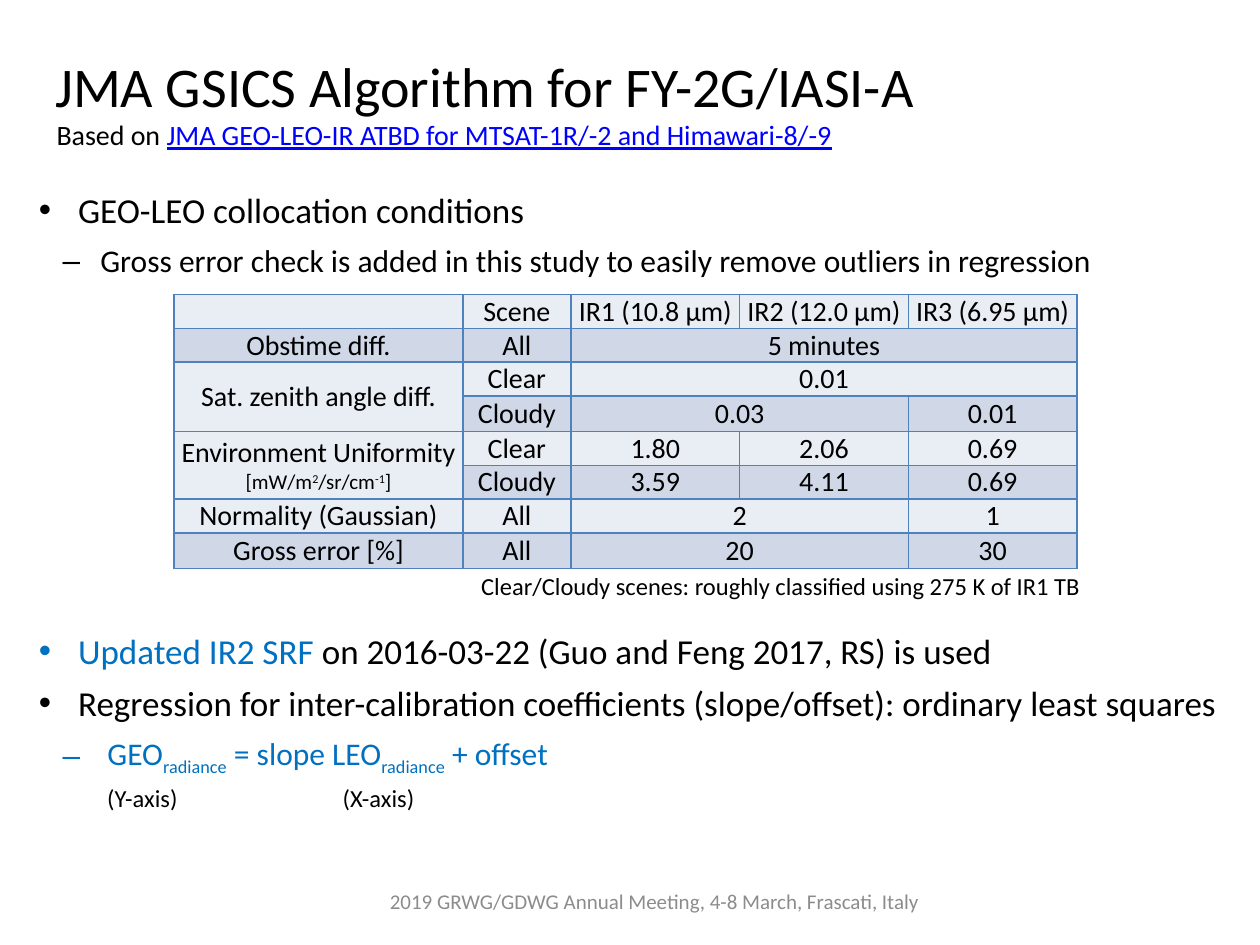
import lxml.etree
import pptx
import pptx.dml.color
import pptx.enum.text
import pptx.oxml.ns
import pptx.util

Cm = pptx.util.Cm
Pt = pptx.util.Pt
RGBColor = pptx.dml.color.RGBColor
ALIGN = pptx.enum.text.PP_ALIGN
ANCHOR = pptx.enum.text.MSO_ANCHOR
qn = pptx.oxml.ns.qn

BLACK = RGBColor(0x00, 0x00, 0x00)
BLUE = RGBColor(0x00, 0x70, 0xC0)
LINK_BLUE = RGBColor(0x00, 0x00, 0xFF)
FOOTER_GRAY = RGBColor(0x8C, 0x8C, 0x8C)
BORDER = RGBColor(0x4F, 0x81, 0xBD)
BANDS = [RGBColor(0xE9, 0xED, 0xF4), RGBColor(0xD0, 0xD8, 0xE8)]


def add_runs(paragraph, size, *parts):
    """Append (text, colour, baseline shift in percent) parts as runs."""
    for text, color, baseline in parts:
        run = paragraph.add_run()
        run.text = text
        run.font.name = "Calibri"
        run.font.size = Pt(size)
        run.font.color.rgb = color
        if baseline:
            run.font._element.set("baseline", str(baseline * 1000))


def add_label(left, top, width, height, size, *parts):
    text_box = slide.shapes.add_textbox(Cm(left), Cm(top), Cm(width), Cm(height))
    text_box.text_frame.word_wrap = True
    add_runs(text_box.text_frame.paragraphs[0], size, *parts)
    return text_box.text_frame


presentation = pptx.Presentation()
presentation.slide_width = Cm(25.4)
presentation.slide_height = Cm(19.05)
slide = presentation.slides.add_slide(presentation.slide_layouts[1])

# Title and source document
title = slide.shapes.title
title.left, title.top, title.width, title.height = Cm(0.86), Cm(0.91), Cm(18.1), Cm(1.63)
title.text_frame.auto_size = pptx.enum.text.MSO_AUTO_SIZE.NONE
title.text_frame.word_wrap = False
title.text_frame.vertical_anchor = ANCHOR.TOP
title.text_frame.paragraphs[0].alignment = ALIGN.LEFT
add_runs(title.text_frame.paragraphs[0], 32, ("JMA GSICS Algorithm for FY-2G/IASI-A", BLACK, 0))

subtitle = add_label(0.89, 2.24, 19, 0.94, 16, ("Based on ", BLACK, 0),
                     ("JMA GEO-LEO-IR ATBD for MTSAT-1R/-2 and Himawari-8/-9", LINK_BLUE, 0))
subtitle.paragraphs[0].runs[1].font.underline = True

# Bullet list: level, space before (the large one leaves room for the table), runs
bullets = [
    (0, 0, [("GEO-LEO collocation conditions", BLACK, 0)]),
    (1, 0, [("Gross error check is added in this study to easily remove outliers in regression",
             BLACK, 0)]),
    (0, 194, [("Updated IR2 SRF ", BLUE, 0),
              ("on 2016-03-22 (Guo and Feng 2017, RS) is used", BLACK, 0)]),
    (0, 0, [("Regression for inter-calibration coefficients (slope/offset): "
             "ordinary least squares", BLACK, 0)]),
    (1, 0, [(" GEO", BLUE, 0), ("radiance", BLUE, -25), (" = slope LEO", BLUE, 0),
            ("radiance", BLUE, -25), (" + offset", BLUE, 0)]),
]
body = slide.placeholders[1]
body.left, body.top, body.width, body.height = Cm(0.53), Cm(3.68), Cm(24.6), Cm(12.07)
body.text_frame.auto_size = pptx.enum.text.MSO_AUTO_SIZE.NONE
body.text_frame.vertical_anchor = ANCHOR.TOP
for index, (level, space_before, parts) in enumerate(bullets):
    paragraph = body.text_frame.paragraphs[0] if index == 0 else body.text_frame.add_paragraph()
    paragraph.level = level
    paragraph.space_before = Pt(space_before)
    paragraph.space_after = Pt(6)
    properties = paragraph._p.get_or_add_pPr()
    properties.set("marL", str(Cm([0.79, 1.24][level])))
    properties.set("indent", str(Cm([-0.79, -0.76][level])))
    add_runs(paragraph, [20, 18][level], *parts)

# Table of collocation conditions
conditions = [
    ["", "Scene", "IR1 (10.8 μm)", "IR2 (12.0 μm)", "IR3 (6.95 μm)"],
    ["Obstime diff.", "All", "5 minutes", "", ""],
    ["Sat. zenith angle diff.", "Clear", "0.01", "", ""],
    ["", "Cloudy", "0.03", "", "0.01"],
    ["Environment Uniformity", "Clear", "1.80", "2.06", "0.69"],
    ["", "Cloudy", "3.59", "4.11", "0.69"],
    ["Normality (Gaussian)", "All", "2", "", "1"],
    ["Gross error [%]", "All", "20", "", "30"],
]
merges = [(1, 2, 1, 4), (2, 2, 2, 4), (3, 2, 3, 3), (6, 2, 6, 3), (7, 2, 7, 3),
          (2, 0, 3, 0), (4, 0, 5, 0)]
column_widths = [5.82, 2.18, 3.4, 3.4, 3.4]
row_heights = [0.68, 0.68, 0.68, 0.72, 0.68, 0.68, 0.68, 0.72]

table = slide.shapes.add_table(len(row_heights), len(column_widths), Cm(3.51), Cm(5.94),
                               Cm(sum(column_widths)), Cm(sum(row_heights))).table
table.first_row = False
table.horz_banding = False
for column, width in zip(table.columns, column_widths):
    column.width = Cm(width)
for row, height in zip(table.rows, row_heights):
    row.height = Cm(height)

for row_index, texts in enumerate(conditions):
    for column_index, text in enumerate(texts):
        cell = table.cell(row_index, column_index)
        cell.vertical_anchor = ANCHOR.MIDDLE
        cell.margin_left = cell.margin_right = Cm(0.1)
        cell.margin_top = cell.margin_bottom = 0
        paragraph = cell.text_frame.paragraphs[0]
        paragraph.alignment = ALIGN.CENTER
        if text:
            add_runs(paragraph, 16, (text, BLACK, 0))
        else:
            lxml.etree.SubElement(paragraph._p, qn("a:endParaRPr"), sz="1600")
        for side in ("a:lnL", "a:lnR", "a:lnT", "a:lnB"):
            line = lxml.etree.SubElement(cell._tc.get_or_add_tcPr(), qn(side), w=str(Pt(1)))
            line_fill = lxml.etree.SubElement(line, qn("a:solidFill"))
            lxml.etree.SubElement(line_fill, qn("a:srgbClr"), val=str(BORDER))
        cell.fill.solid()
        cell.fill.fore_color.rgb = BANDS[row_index % 2]

unit = table.cell(4, 0).text_frame.add_paragraph()
unit.alignment = ALIGN.CENTER
unit.space_after = Pt(6)
add_runs(unit, 12, ("[mW/m", BLACK, 0), ("2", BLACK, 30), ("/sr/cm", BLACK, 0),
         ("-1", BLACK, 30), ("]", BLACK, 0))
for top, left, bottom, right in merges:
    table.cell(top, left).merge(table.cell(bottom, right))

# Notes and footer
scene_note = add_label(9.7, 11.38, 12.57, 0.86, 14,
                       ("Clear/Cloudy scenes: roughly classified using 275 K of IR1 TB", BLACK, 0))
scene_note.margin_left = scene_note.margin_right = 0

axes = add_label(1.91, 15.67, 6.81, 0.86, 14, ("(Y-axis)\t(X-axis)", BLACK, 0))
tab_stops = lxml.etree.SubElement(axes.paragraphs[0]._p.get_or_add_pPr(), qn("a:tabLst"))
lxml.etree.SubElement(tab_stops, qn("a:tab"), pos=str(Cm(4.75)), algn="l")

footer = add_label(7.29, 17.65, 11.81, 1.02, 12,
                   ("2019 GRWG/GDWG Annual Meeting, 4-8 March, Frascati, Italy", FOOTER_GRAY, 0))
footer.vertical_anchor = ANCHOR.MIDDLE
footer.paragraphs[0].alignment = ALIGN.CENTER

presentation.save("out.pptx")
